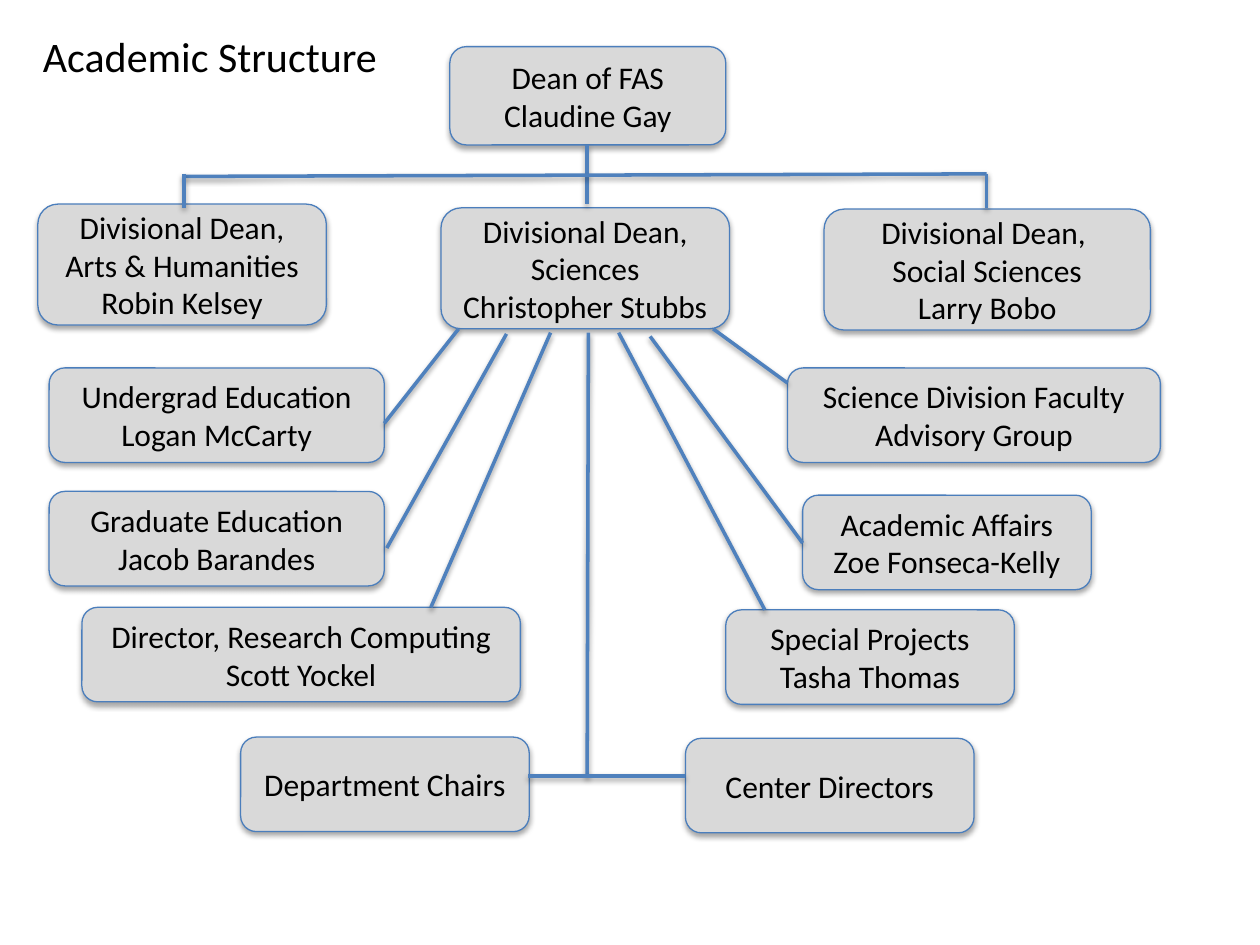
from dataclasses import dataclass

from lxml.etree import SubElement
from pptx import Presentation
from pptx.dml.color import RGBColor as RGB
from pptx.enum.shapes import MSO_CONNECTOR as Line, MSO_SHAPE as Shape
from pptx.enum.text import MSO_ANCHOR as Anchor, MSO_AUTO_SIZE as AutoSize, PP_ALIGN as Align
from pptx.oxml.ns import qn
from pptx.util import Inches, Pt


@dataclass(frozen=True)
class Theme:
    """Colours, type and line sizes of the chart."""
    font: str = "Calibri"
    title: float = 24
    body: float = 18
    ink: str = "000000"
    fill: str = "D9D9D9"
    border: str = "4B7EBC"
    link: str = "4F81BD"
    border_width: float = 0.75
    link_width: float = 2


@dataclass(frozen=True)
class Box:
    """A region on a grid of 100 columns by 75 rows."""
    left: float
    top: float
    width: float
    height: float

    def point(self, col, row):
        """Slide position of a grid point counted from the region's corner."""
        return Inches((self.left + col) / 10), Inches((self.top + row) / 10)


THEME = Theme()


def write(tf, text, *, size=THEME.body, align=Align.CENTER, anchor=Anchor.MIDDLE, wrap=True):
    """Fill a text frame, one paragraph per line of text."""
    tf.text = text
    tf.word_wrap = wrap
    tf.vertical_anchor = anchor
    for p in tf.paragraphs:
        p.alignment = align
        for r in p.runs:
            r.font.name, r.font.size = THEME.font, Pt(size)
            r.font.color.rgb = RGB.from_string(THEME.ink)


def add_shadow(sp, distance, opacity):
    """Give a shape or connector a soft shadow straight below it."""
    effects = SubElement(sp.element.spPr, qn("a:effectLst"))
    shadow = SubElement(effects, qn("a:outerShdw"), blurRad=str(Pt(3.1)),
                        dist=str(Pt(distance)), dir="5400000", rotWithShape="0")
    colour = SubElement(shadow, qn("a:srgbClr"), val=THEME.ink)
    SubElement(colour, qn("a:alpha"), val=str(opacity * 1000))


def add_card(slide, box, text, col, row, width=22.9, height=7.5):
    """Add one rounded card of the chart."""
    sp = slide.shapes.add_shape(Shape.ROUNDED_RECTANGLE, *box.point(col, row),
                                Inches(width / 10), Inches(height / 10))
    sp.fill.solid()
    sp.fill.fore_color.rgb = RGB.from_string(THEME.fill)
    sp.line.color.rgb = RGB.from_string(THEME.border)
    sp.line.width = Pt(THEME.border_width)
    add_shadow(sp, 1.8, 35)
    write(sp.text_frame, text)


def add_link(slide, box, start, end):
    """Join two grid points of a region with a line."""
    link = slide.shapes.add_connector(Line.STRAIGHT, *box.point(*start), *box.point(*end))
    link.line.color.rgb = RGB.from_string(THEME.link)
    link.line.width = Pt(THEME.link_width)
    add_shadow(link, 1.6, 38)


def add_region(slide, box, cards, links):
    """Add a region's cards, then the links above them."""
    for card in cards:
        add_card(slide, box, *card)
    for start, end in links:
        add_link(slide, box, start, end)


def add_title(slide, box, text):
    """Place the slide title."""
    sp = slide.shapes.title
    sp.left, sp.top = box.point(0, 0)
    sp.width, sp.height = Inches(box.width / 10), Inches(box.height / 10)
    write(sp.text_frame, text, size=THEME.title, align=Align.LEFT, anchor=Anchor.TOP, wrap=False)
    sp.text_frame.auto_size = AutoSize.SHAPE_TO_FIT_TEXT


def add_deans(slide, box):
    """Draw the dean above the three divisional deans."""
    left, middle, right, rail = 11.6, 43.6, 75.3, 10.1
    add_region(slide, box, [
        ("Dean of FAS\nClaudine Gay", 32.7, 0, 21.9, 7.8),
        ("Divisional Dean, Sciences\nChristopher Stubbs", 32, 12.8, 22.9, 9.6),
        ("Divisional Dean, \nSocial Sciences\nLarry Bobo", 62.4, 12.9, 25.9, 9.6),
        ("Divisional Dean, Arts & Humanities\nRobin Kelsey", 0, 12.5, 22.9, 9.6),
    ], [
        ((middle, 7.8), (middle, 12.5)),
        ((right, rail), (left, rail + 0.2)),
        ((right, rail), (right, 12.8)),
        ((left, rail), (left, 12.8)),
    ])


def add_offices(slide, box):
    """Draw the offices that fan out from the science dean."""
    add_region(slide, box, [
        ("Undergrad Education\nLogan McCarty", 0, 3.2, 26.6),
        ("Graduate Education\nJacob Barandes", 0, 13, 26.6),
        ("Director, Research Computing\nScott Yockel", 2.6, 22.2, 34.8),
        ("Science Division Faculty Advisory Group", 58.6, 3.2, 29.6),
        ("Academic Affairs\nZoe Fonseca-Kelly", 59.8, 13.3),
        ("Special Projects\nTasha Thomas", 53.7, 22.4),
    ], [
        ((32.5, 0.1), (26.6, 7.6)),
        ((36.3, 0.5), (26.8, 17.5)),
        ((39.8, 0.4), (30.3, 22.2)),
        ((52.7, 0.1), (58.6, 4.4)),
        ((47.7, 0.7), (59.8, 17.1)),
        ((45.2, 0.4), (56.8, 22.4)),
    ])


def add_leaders(slide, box):
    """Draw the chairs and directors on the central stem."""
    rail = 35.6
    add_region(slide, box, [
        ("Department Chairs", 0, 32.5),
        ("Center Directors", 35.3, 32.6),
    ], [
        ((27.6, 0.4), (27.5, rail)),
        ((35.3, rail), (22.8, rail)),
    ])


def main():
    """Build and save the slide."""
    prs = Presentation()
    prs.slide_width, prs.slide_height = Inches(10), Inches(7.5)
    s = prs.slides.add_slide(prs.slide_layouts[5])
    add_title(s, Box(2.4, 1.9, 29.5, 5), "Academic Structure")
    add_deans(s, Box(3, 3.7, 88.3, 22.5))
    add_offices(s, Box(3.9, 26, 88.2, 29.9))
    add_leaders(s, Box(19.1, 26, 58.2, 40.1))
    prs.save("out.pptx")


if __name__ == "__main__":
    main()
